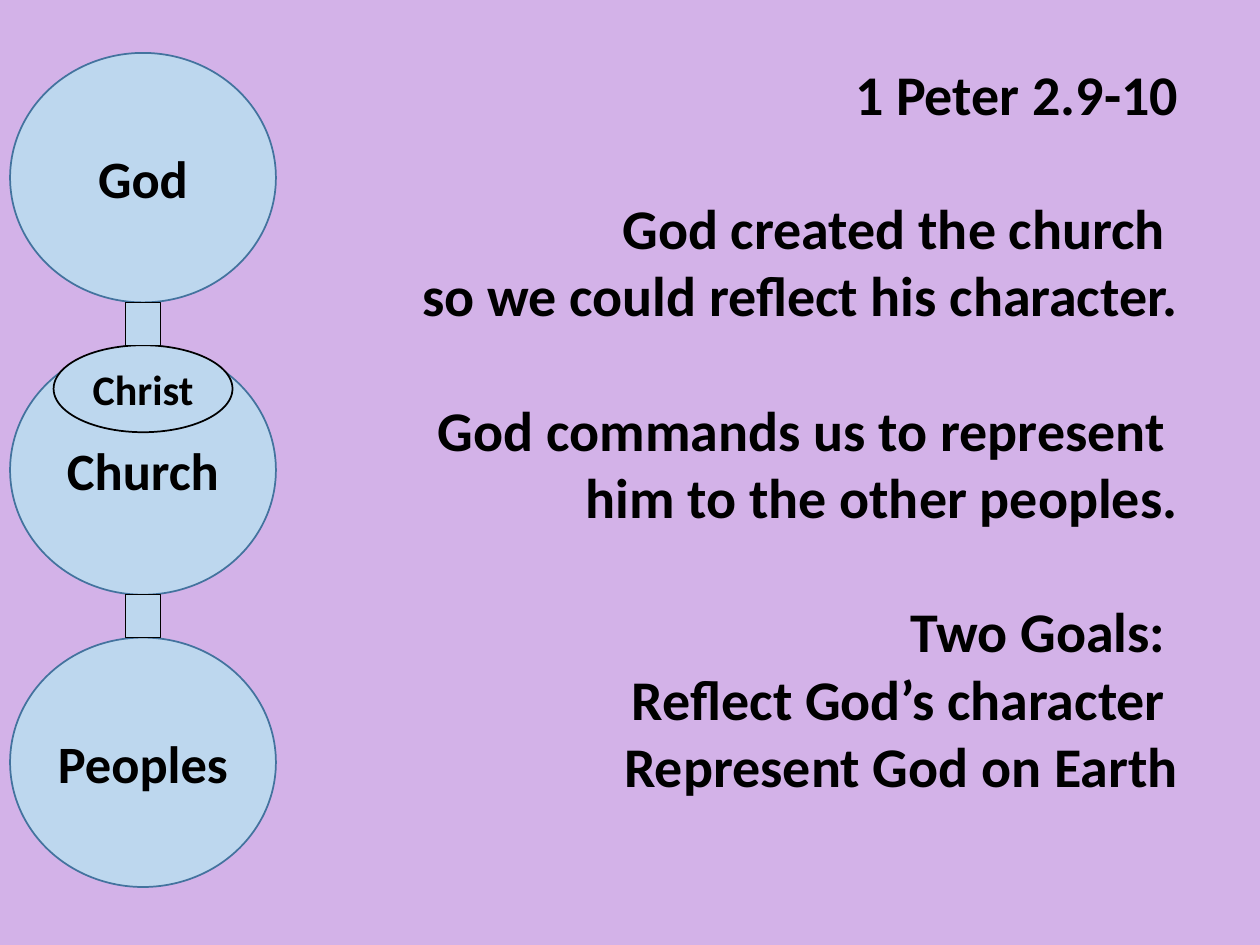
from pptx import Presentation
from pptx.dml.color import RGBColor
from pptx.enum.shapes import MSO_SHAPE
from pptx.enum.text import MSO_ANCHOR, PP_ALIGN
from pptx.util import Inches, Pt

COLORS = {"background": "D3B2E8", "fill": "BDD7EE", "outline": "43739E", "black": "000000"}
FONT = "Calibri"
CIRCLES = ["God", "Church", "Peoples"]
MESSAGE = [
    ["1 Peter 2.9-10"],
    ["God created the church ", "so we could reflect his character."],
    ["God commands us to represent ", "him to the other peoples."],
    ["Two Goals: ", "Reflect God’s character ", "Represent God on Earth"],
]

LEFT, TOP = 0.08, 0.42
CIRCLE_W, CIRCLE_H = 2.11, 1.98
LINK_W, LINK_H = 0.28, 0.34
CHRIST_W, CHRIST_H = 1.42, 0.69
PITCH = CIRCLE_H + LINK_H
CENTER = LEFT + CIRCLE_W / 2


def color(name):
    return RGBColor.from_string(COLORS[name])


def write(paragraph, text, size, align):
    paragraph.text = text
    paragraph.alignment = align
    paragraph.font.name = FONT
    paragraph.font.size = Pt(size)
    paragraph.font.bold = True
    paragraph.font.color.rgb = color("black")


def add_part(kind, top, width, height, outline, weight, label="", size=30):
    part = slide.shapes.add_shape(
        kind, Inches(CENTER - width / 2), Inches(top), Inches(width), Inches(height))
    part.shadow.inherit = False
    part.fill.solid()
    part.fill.fore_color.rgb = color("fill")
    part.line.color.rgb = color(outline)
    part.line.width = Pt(weight)
    if label:
        frame = part.text_frame
        frame.margin_left = frame.margin_right = 0
        frame.vertical_anchor = MSO_ANCHOR.MIDDLE
        write(frame.paragraphs[0], label, size, PP_ALIGN.CENTER)


prs = Presentation()
prs.slide_width, prs.slide_height = Inches(10), Inches(7.5)
slide = prs.slides.add_slide(prs.slide_layouts[6])
slide.background.fill.solid()
slide.background.fill.fore_color.rgb = color("background")

for i, name in enumerate(CIRCLES):
    add_part(MSO_SHAPE.OVAL, TOP + i * PITCH, CIRCLE_W, CIRCLE_H, "outline", 1, name)
add_part(MSO_SHAPE.OVAL, TOP + PITCH, CHRIST_W, CHRIST_H, "black", 1, "Christ", 24)
for i in range(len(CIRCLES) - 1):
    add_part(MSO_SHAPE.RECTANGLE, TOP + i * PITCH + CIRCLE_H, LINK_W, LINK_H, "black", 0.75)

message = slide.shapes.add_textbox(
    Inches(2.63), Inches(TOP), Inches(6.82), Inches(6.56)).text_frame
message.word_wrap = True
for g, group in enumerate(MESSAGE):
    for n, line in enumerate(group):
        first = g == 0 and n == 0
        paragraph = message.paragraphs[0] if first else message.add_paragraph()
        write(paragraph, line, 32, PP_ALIGN.RIGHT)
        if g > 0 and n == 0:
            paragraph.space_before = Pt(38.4)

prs.save("out.pptx")
